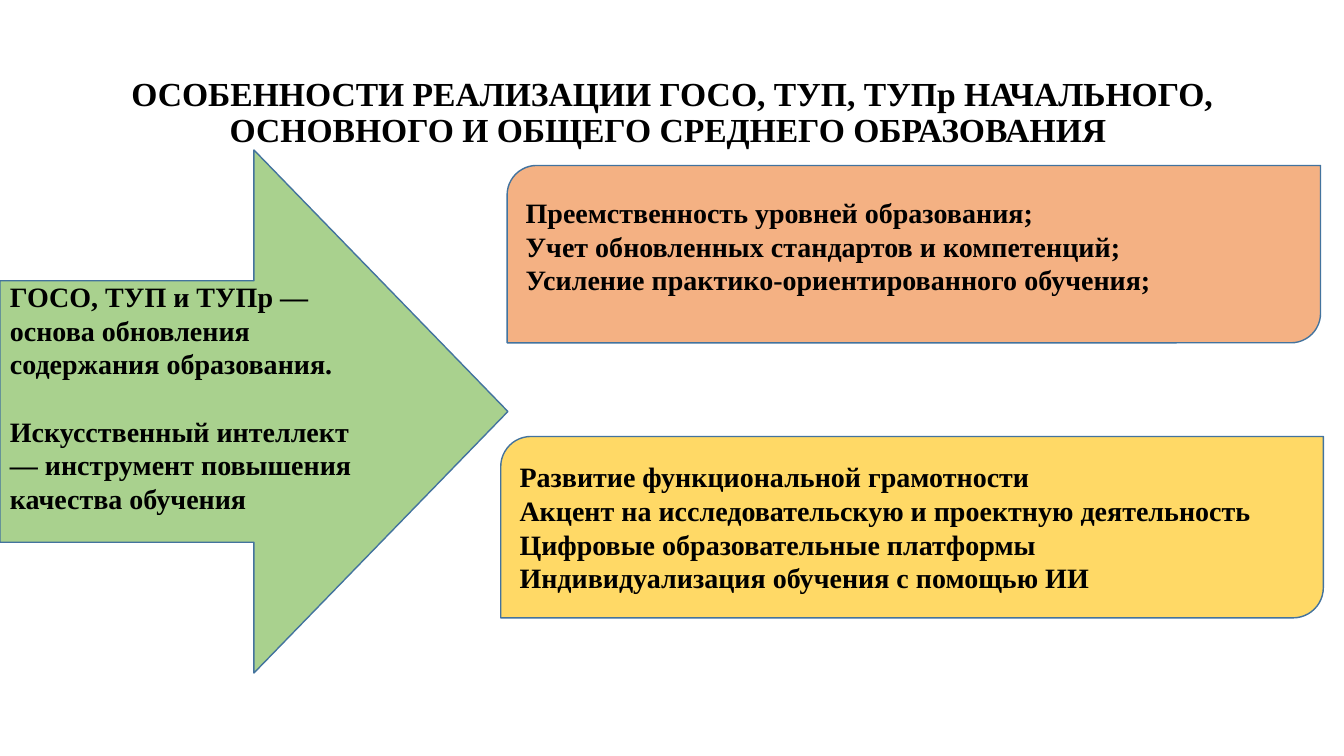
from dataclasses import dataclass

from pptx import Presentation
from pptx.dml.color import RGBColor
from pptx.enum.shapes import MSO_SHAPE as Preset
from pptx.enum.text import MSO_ANCHOR as Anchor, PP_ALIGN as Align
from pptx.shapes.autoshape import Shape
from pptx.slide import Slide
from pptx.util import Cm, Pt

BLACK = RGBColor(0x00, 0x00, 0x00)
OUTLINE = RGBColor(0x43, 0x73, 0x9E)
GREEN = RGBColor(0xA9, 0xD1, 0x8E)
ORANGE = RGBColor(0xF4, 0xB1, 0x83)
YELLOW = RGBColor(0xFF, 0xD9, 0x66)
FONT = "Times New Roman"
TITLE = (
    "ОСОБЕННОСТИ РЕАЛИЗАЦИИ ГОСО, ТУП, ТУПр НАЧАЛЬНОГО, "
    "ОСНОВНОГО И ОБЩЕГО СРЕДНЕГО ОБРАЗОВАНИЯ "
)


@dataclass(frozen=True)
class Block:
    preset: Preset
    left: float
    top: float
    width: float
    height: float
    fill: RGBColor
    lines: tuple[str, ...]
    bottom_inset: float = 0.13
    gap: float = 0


BLOCKS = (
    Block(
        Preset.ROUND_2_DIAG_RECTANGLE, 12.78, 4.17, 20.5, 4.47, ORANGE,
        (
            "Преемственность уровней образования;",
            "Учет обновленных стандартов и компетенций;",
            "Усиление практико-ориентированного обучения;",
        ),
        bottom_inset=0.53,
    ),
    Block(
        Preset.ROUND_2_DIAG_RECTANGLE, 12.62, 11, 20.73, 4.57, YELLOW,
        (
            "Развитие функциональной грамотности",
            "Акцент на исследовательскую и проектную деятельность",
            "Цифровые образовательные платформы",
            "Индивидуализация обучения с помощью ИИ",
        ),
    ),
    Block(
        Preset.RIGHT_ARROW, 0, 3.78, 12.8, 13.18, GREEN,
        (
            "ГОСО, ТУП и ТУПр — основа обновления содержания образования.",
            "Искусственный интеллект — инструмент повышения качества обучения",
        ),
        bottom_inset=0.84,
        gap=24,
    ),
)


def write_text(shape: Shape, text: str, size: float, alignment: Align) -> None:
    frame = shape.text_frame
    frame.text = text
    frame.word_wrap = True
    frame.vertical_anchor = Anchor.MIDDLE
    for paragraph in frame.paragraphs:
        paragraph.alignment = alignment
        for run in paragraph.runs:
            run.font.name = FONT
            run.font.size = Pt(size)
            run.font.bold = True
            run.font.color.rgb = BLACK


def draw_title(slide: Slide) -> None:
    title = slide.shapes.add_textbox(Cm(2.34), Cm(1.02), Cm(29.21), Cm(3.68))
    write_text(title, TITLE, 24, Align.CENTER)
    title.text_frame.paragraphs[0].line_spacing = 0.9


def draw_block(slide: Slide, block: Block) -> None:
    shape = slide.shapes.add_shape(
        block.preset, Cm(block.left), Cm(block.top), Cm(block.width), Cm(block.height)
    )
    shape.shadow.inherit = False
    shape.fill.solid()
    shape.fill.fore_color.rgb = block.fill
    shape.line.color.rgb = OUTLINE
    shape.line.width = Pt(1)
    write_text(shape, "\n".join(block.lines), 20, Align.LEFT)
    shape.text_frame.margin_bottom = Cm(block.bottom_inset)
    for paragraph in shape.text_frame.paragraphs[1:]:
        paragraph.space_before = Pt(block.gap)


def main() -> None:
    presentation = Presentation()
    presentation.slide_width = Cm(33.87)
    presentation.slide_height = Cm(19.05)
    slide = presentation.slides.add_slide(presentation.slide_layouts[6])
    draw_title(slide)
    for block in BLOCKS:
        draw_block(slide, block)
    presentation.save("out.pptx")


if __name__ == "__main__":
    main()
